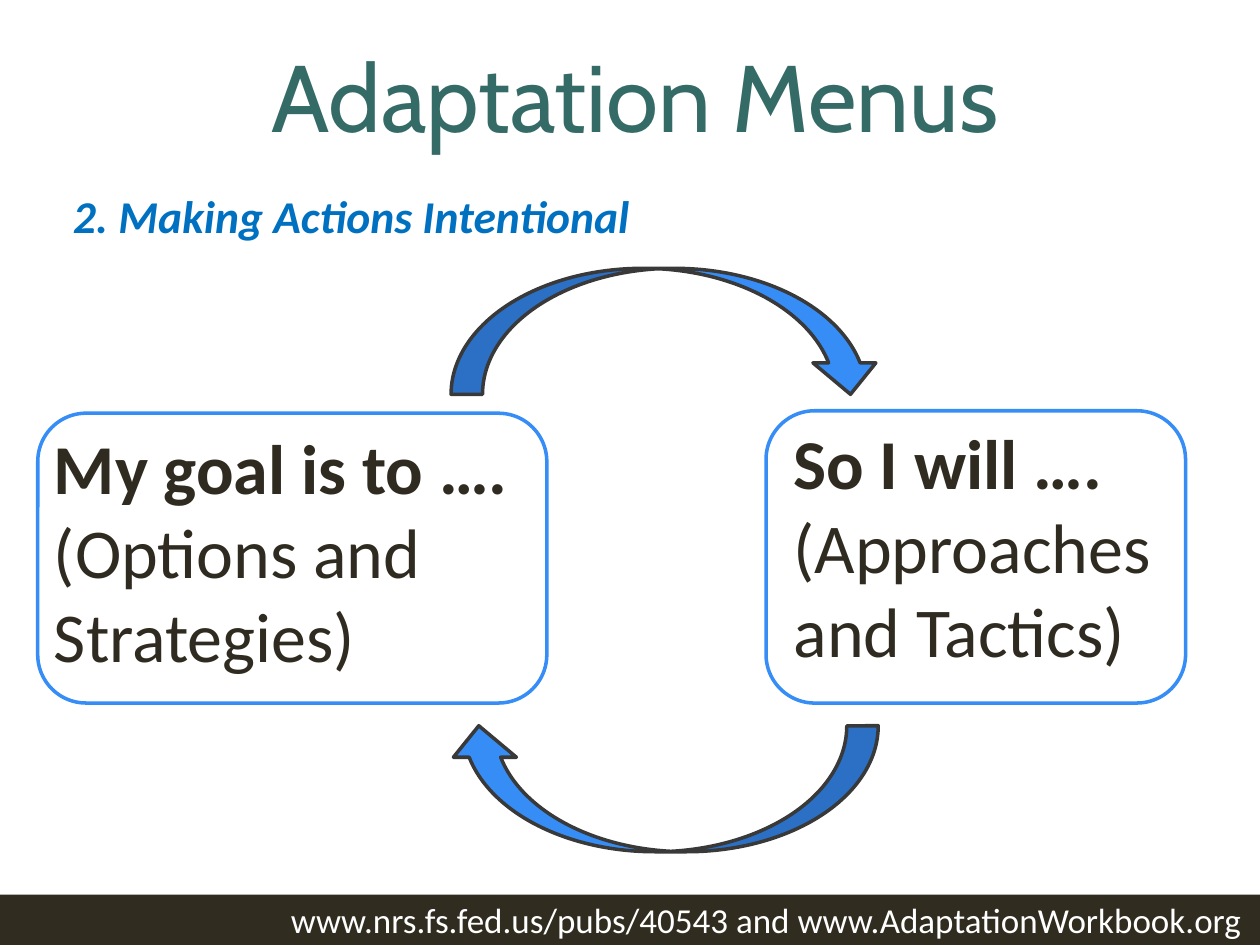
import pptx
import pptx.util
import pptx.dml.color
import pptx.enum.shapes
import pptx.enum.text
from dataclasses import dataclass, field
from typing import Optional

Inches = pptx.util.Inches
Kind = pptx.enum.shapes.MSO_SHAPE
Align = pptx.enum.text.PP_ALIGN
Anchor = pptx.enum.text.MSO_ANCHOR
Fit = pptx.enum.text.MSO_AUTO_SIZE

COLORS = {
    "teal": "356B67",
    "blue": "0070C0",
    "dark": "2F2B20",
    "band": "302C20",
    "sky": "368DF6",
    "edge": "393939",
    "white": "FFFFFF",
}


@dataclass
class Label:
    box: tuple
    lines: list  # pairs of text and font values
    color: str
    font: dict
    frame: dict = field(default_factory=dict)
    para: dict = field(default_factory=dict)


@dataclass
class Form:
    kind: int
    box: tuple
    fill: Optional[str] = None
    line: Optional[str] = None
    turn: int = 0


def rgb(name: str) -> pptx.dml.color.RGBColor:
    return pptx.dml.color.RGBColor.from_string(COLORS[name])


def apply(target, values: dict) -> None:
    for key, value in values.items():
        setattr(target, key, value)


def draw_label(slide, label: Label) -> None:
    frame = slide.shapes.add_textbox(*map(Inches, label.box)).text_frame
    apply(frame, {"word_wrap": True, **label.frame})
    for i, (text, extra) in enumerate(label.lines):
        para = frame.paragraphs[0] if i == 0 else frame.add_paragraph()
        apply(para, label.para)
        run = para.add_run()
        run.text = text
        apply(run.font, {**label.font, **extra})
        run.font.color.rgb = rgb(label.color)


def draw_form(slide, form: Form) -> None:
    shape = slide.shapes.add_shape(form.kind, *map(Inches, form.box))
    apply(shape, {"rotation": form.turn})
    shape.shadow.inherit = False
    if form.fill:
        shape.fill.solid()
        shape.fill.fore_color.rgb = rgb(form.fill)
    else:
        shape.fill.background()
    if form.line:
        shape.line.color.rgb = rgb(form.line)
        shape.line.width = pptx.util.Pt(2)
    else:
        shape.line.fill.background()


def style(name: str, size: int, **extra) -> dict:
    return {"name": name, "size": pptx.util.Pt(size), **extra}


def card(box: tuple, head: str, note: str) -> Label:
    return Label(box, [(head, {"bold": True}), (note, {})], "dark",
                 style("Calibri", 40), {"auto_size": Fit.SHAPE_TO_FIT_TEXT})


BAND = Form(Kind.RECTANGLE, (0, 7.1, 10, 0.4), fill="band")

LABELS = [
    # Title
    Label((0.25, 0.17, 9.58, 1.17), [("Adaptation Menus", {})], "teal",
          style("Cabin", 54), {"vertical_anchor": Anchor.MIDDLE},
          {"alignment": Align.CENTER}),
    # Footer links
    Label((2.21, 7.08, 7.81, 0.44),
          [("www.nrs.fs.fed.us/pubs/40543 and www.AdaptationWorkbook.org", {})],
          "white", style("Calibri", 20),
          {"word_wrap": False, "auto_size": Fit.SHAPE_TO_FIT_TEXT}),
    # Heading
    Label((0.48, 1.44, 6.77, 5.45), [("2. Making Actions Intentional", {})],
          "blue", style("Calibri", 26, bold=True, italic=True),
          para={"space_after": pptx.util.Pt(12)}),
    # Goal and action
    card((0.33, 3.32, 4.17, 2.12), "My goal is to ….", "(Options and Strategies)"),
    card((6.2, 3.28, 3.21, 2.12), "So I will ….", "(Approaches and Tactics)"),
]

FORMS = [
    # Frames around goal and action
    Form(Kind.ROUNDED_RECTANGLE, (0.3, 3.28, 4.04, 2.3), line="sky"),
    Form(Kind.ROUNDED_RECTANGLE, (6.08, 3.26, 3.33, 2.32), line="sky"),
    # Arrows of the cycle
    Form(Kind.CURVED_DOWN_ARROW, (3.58, 2.13, 3.42, 1), "sky", "edge"),
    Form(Kind.CURVED_DOWN_ARROW, (3.55, 5.76, 3.42, 1), "sky", "edge", 180),
]


def main() -> None:
    deck = pptx.Presentation()
    apply(deck, {"slide_width": Inches(10), "slide_height": Inches(7.5)})
    slide = deck.slides.add_slide(deck.slide_layouts[6])
    draw_form(slide, BAND)
    for label in LABELS:
        draw_label(slide, label)
    for form in FORMS:
        draw_form(slide, form)
    deck.save("out.pptx")


if __name__ == "__main__":
    main()
